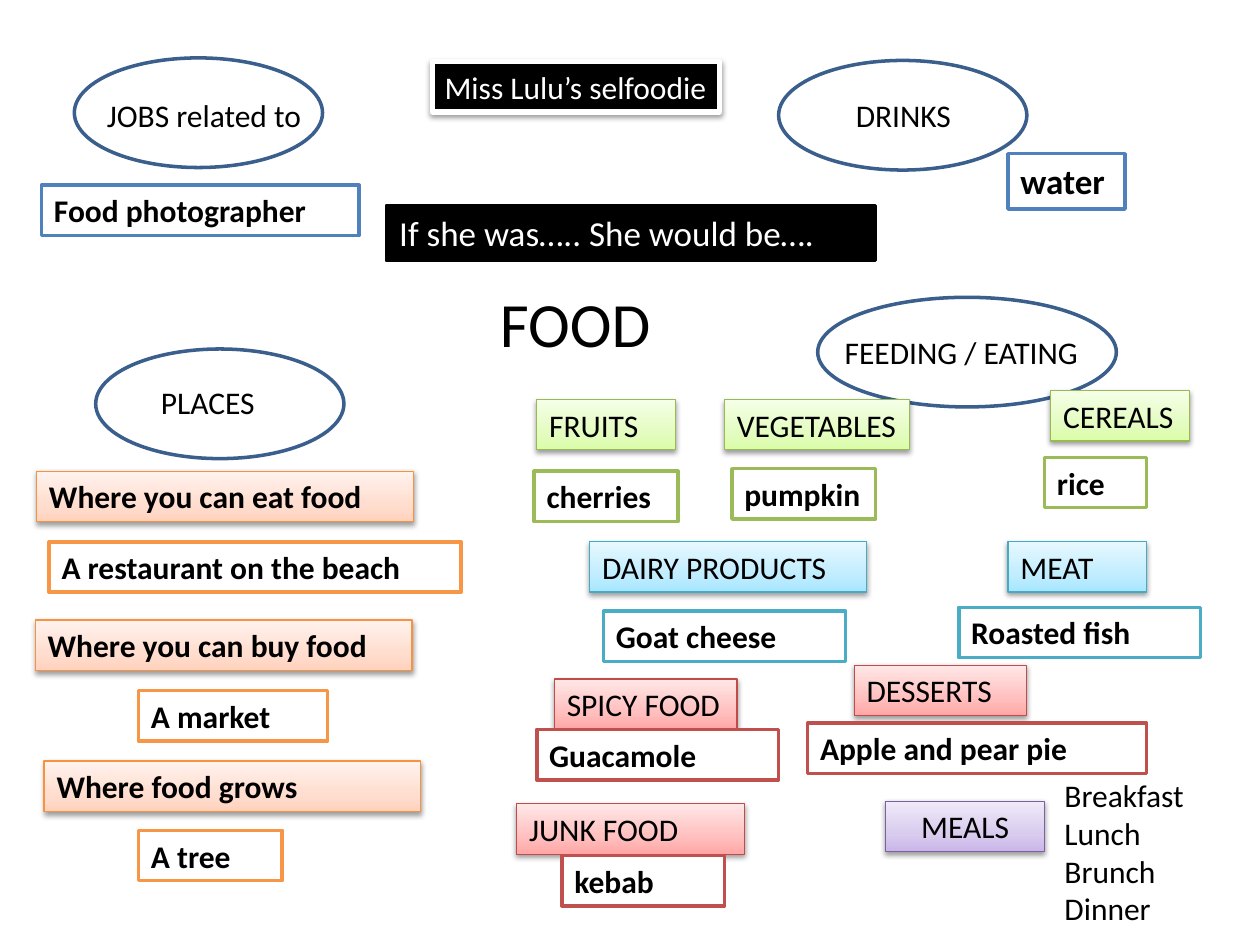
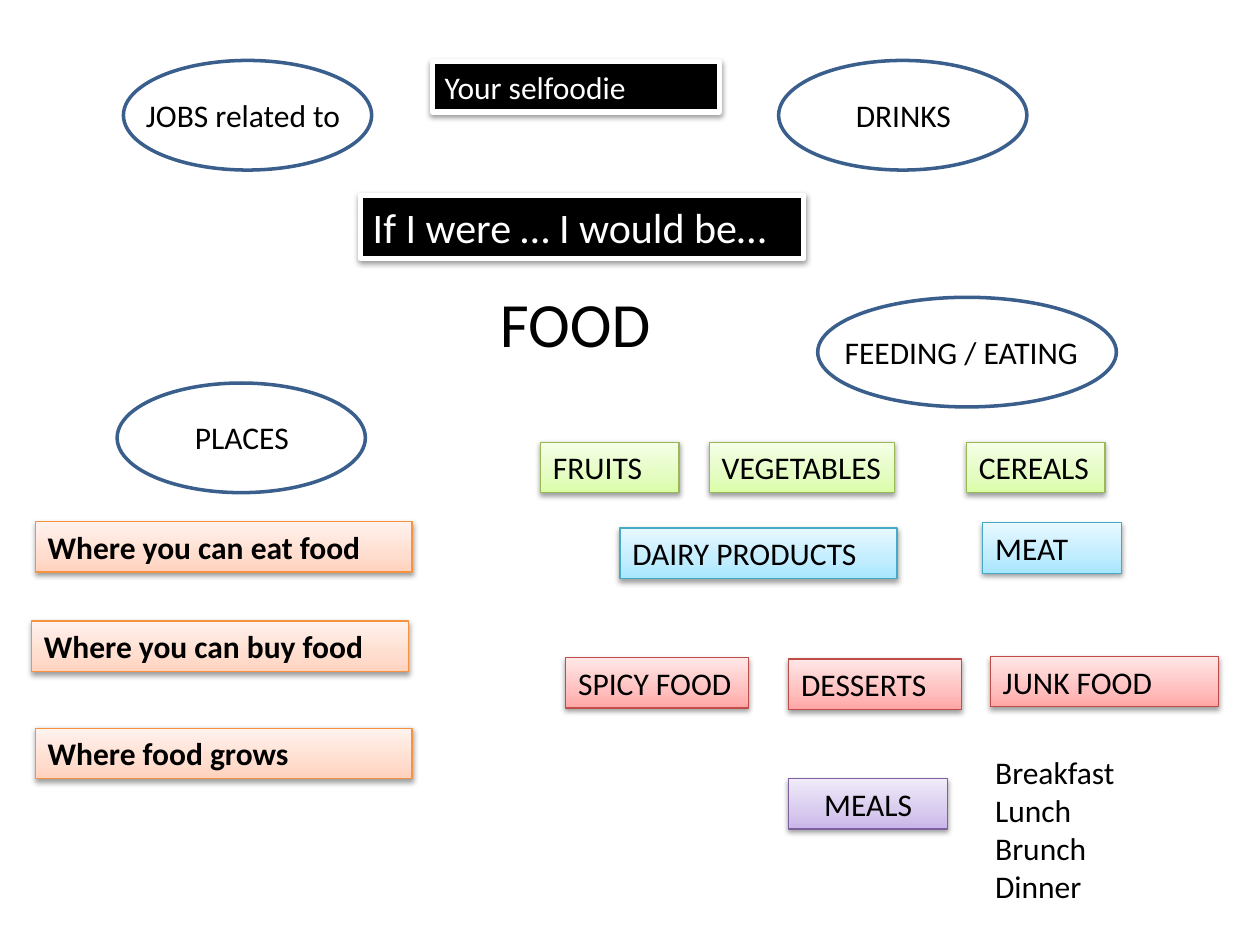
from copy import deepcopy
from dataclasses import dataclass

from lxml import etree
from pptx import Presentation
from pptx.dml.color import RGBColor
from pptx.enum.shapes import MSO_SHAPE
from pptx.enum.text import MSO_ANCHOR, MSO_AUTO_SIZE, PP_ALIGN
from pptx.oxml.ns import qn
from pptx.util import Inches, Pt

RECT, OVAL = MSO_SHAPE.RECTANGLE, MSO_SHAPE.OVAL
LEFT, CENTER = PP_ALIGN.LEFT, PP_ALIGN.CENTER
TOP = MSO_ANCHOR.TOP
GROW = MSO_AUTO_SIZE.SHAPE_TO_FIT_TEXT


@dataclass(frozen=True)
class Family:
    """Colours of one group: category outline, answer outline, gradient from bottom to top."""
    edge: str
    accent: str
    stops: tuple = ()


@dataclass(frozen=True)
class Theme:
    font: str = "Calibri"
    black: str = "000000"
    white: str = "FFFFFF"
    oval_line: str = "3A5F8C"
    body: int = 18
    large: int = 20
    banner: int = 24
    title: int = 36
    thin: float = 0.75
    medium: float = 2
    thick: float = 3
    row: float = 0.4
    oval_height: float = 0.87


THEME = Theme()
BLUE = Family("4F81BD", "4F81BD")
ORANGE = Family("F69240", "F79646", ("FFD2BD", "FFDED0", "FFF2ED"))
GREEN = Family("98B955", "9BBB59", ("DAFDA7", "E4FCC2", "F5FFE7"))
AQUA = Family("46AAC5", "4BACC6", ("A7E6FF", "C1EDFF", "E7F8FF"))
RED = Family("BF4C48", "C0504D", ("FFA6A5", "FFC0BF", "FFE7E7"))
PURPLE = Family("7D60A0", "8064A2", ("C9B5E8", "D8CBEE", "F0EAF9"))
STOP_POSITIONS = (0, 0.35, 1)

MEALS = ("Breakfast", "Lunch", "Brunch", "Dinner")

# Category name: colour family, width
CATEGORIES = {
    "Where you can eat food": (ORANGE, 2.99),
    "Where you can buy food": (ORANGE, 2.99),
    "Where food grows": (ORANGE, 2.99),
    "FRUITS": (GREEN, 1.1),
    "VEGETABLES": (GREEN, 1.47),
    "CEREALS": (GREEN, 1.1),
    "DAIRY PRODUCTS": (AQUA, 2.2),
    "MEAT": (AQUA, 1.1),
    "JUNK FOOD": (RED, 1.81),
    "SPICY FOOD": (RED, 1.45),
    "DESSERTS": (RED, 1.37),
    "MEALS": (PURPLE, 1.26),
}

# Topic name: label width, oval width, alignment
TOPICS = {
    "JOBS related to": (1.81, 1.97, LEFT),
    "PLACES": (1.34, 1.97, CENTER),
    "DRINKS": (1.34, 1.97, CENTER),
    "FEEDING / EATING": (2.24, 2.37, CENTER),
}

# Topic name: label left and top, oval left and top
FIXED_TOPICS = {
    "DRINKS": (6.5, 0.71, 6.18, 0.48),
    "FEEDING / EATING": (6.51, 2.59, 6.49, 2.36),
}
LULU_TOPICS = {
    "JOBS related to": (0.75, 0.71, 0.59, 0.46),
    "PLACES": (0.98, 2.99, 0.76, 2.77),
    **FIXED_TOPICS,
}
YOUR_TOPICS = {
    "JOBS related to": (1.06, 0.71, 0.98, 0.48),
    "PLACES": (1.25, 3.27, 0.93, 3.04),
    **FIXED_TOPICS,
}

# Category name: left, top
LULU_CATEGORIES = {
    "Where you can eat food": (0.29, 3.74),
    "Where you can buy food": (0.28, 4.92),
    "Where food grows": (0.35, 6.04),
    "FRUITS": (4.26, 3.17),
    "VEGETABLES": (5.75, 3.17),
    "DAIRY PRODUCTS": (4.68, 4.3),
    "CEREALS": (8.34, 3.1),
    "MEAT": (8, 4.3),
    "JUNK FOOD": (4.1, 6.38),
    "SPICY FOOD": (4.4, 5.39),
    "DESSERTS": (6.78, 5.28),
    "MEALS": (7.03, 6.36),
}
YOUR_CATEGORIES = {
    "Where you can eat food": (0.28, 4.14),
    "Where you can buy food": (0.25, 4.93),
    "Where food grows": (0.28, 5.78),
    "FRUITS": (4.29, 3.51),
    "VEGETABLES": (5.63, 3.51),
    "CEREALS": (7.67, 3.51),
    "DAIRY PRODUCTS": (4.92, 4.19),
    "MEAT": (7.8, 4.15),
    "JUNK FOOD": (7.86, 5.21),
    "SPICY FOOD": (4.49, 5.22),
    "DESSERTS": (6.26, 5.23),
    "MEALS": (6.26, 6.18),
}

# Text, colour family, left, top, width
LULU_ANSWERS = [
    ("Food photographer", BLUE, 0.33, 1.47, 2.52),
    ("A restaurant on the beach", ORANGE, 0.39, 4.3, 3.27),
    ("A market", ORANGE, 1.1, 5.48, 1.5),
    ("A tree", ORANGE, 1.1, 6.59, 1.14),
    ("cherries", GREEN, 4.24, 3.74, 1.14),
    ("pumpkin", GREEN, 5.81, 3.72, 1.14),
    ("rice", GREEN, 8.29, 3.63, 0.81),
    ("Goat cheese", AQUA, 4.79, 4.85, 1.92),
    ("Roasted fish", AQUA, 7.61, 4.82, 1.92),
    ("Guacamole", RED, 4.26, 5.79, 1.92),
    ("Apple and pear pie", RED, 6.41, 5.74, 2.69),
    ("kebab", RED, 4.46, 6.79, 1.29),
]


def rgb(value):
    return RGBColor.from_string(value)


class FoodMap:
    def __init__(self, prs, theme):
        self.prs, self.theme = prs, theme
        self.slide = None

    def new_slide(self):
        self.slide = self.prs.slides.add_slide(self.prs.slide_layouts[6])

    def add_text(self, sp, lines, size, color, bold=False, align=LEFT):
        tf = sp.text_frame
        tf.word_wrap = True
        tf.auto_size = GROW
        tf.vertical_anchor = TOP
        for i, line in enumerate(lines):
            p = tf.add_paragraph() if i else tf.paragraphs[0]
            p.alignment = align
            r = p.add_run()
            r.text = line
            r.font.name = self.theme.font
            r.font.size = Pt(size)
            r.font.bold = bold
            r.font.color.rgb = rgb(color)

    def label(self, lines, left, top, width, height, size, align=LEFT):
        sp = self.slide.shapes.add_textbox(*map(Inches, (left, top, width, height)))
        self.add_text(sp, lines, size, self.theme.black, align=align)

    def outline(self, preset, box, line, weight):
        sp = self.slide.shapes.add_shape(preset, *map(Inches, box))
        sp.shadow.inherit = False
        sp.fill.background()
        sp.line.color.rgb = rgb(line)
        sp.line.width = Pt(weight)
        return sp

    def panel(self, box, fill, line, weight):
        sp = self.outline(RECT, box, line, weight)
        sp.fill.solid()
        sp.fill.fore_color.rgb = rgb(fill)
        return sp

    def cast_shadow(self, sp):
        effects = sp._element.spPr.find(qn("a:effectLst"))
        shadow = etree.SubElement(effects, qn("a:outerShdw"), blurRad=str(Pt(3.1)),
                                  dist=str(Pt(1.6)), dir="5400000", rotWithShape="0")
        color = etree.SubElement(shadow, qn("a:srgbClr"), val=self.theme.black)
        etree.SubElement(color, qn("a:alpha"), val="38000")

    def shade(self, sp, colors):
        """Fill with a vertical three-stop gradient, first colour at the bottom."""
        sp.fill.gradient()
        sp.fill.gradient_angle = 90
        stops = sp._element.spPr.find(".//" + qn("a:gsLst"))
        stops.append(deepcopy(stops[-1]))
        for stop, position, color in zip(sp.fill.gradient_stops, STOP_POSITIONS, colors):
            stop.position = position
            stop.color.rgb = rgb(color)

    def topic(self, name, left, top, oval_left, oval_top):
        t = self.theme
        width, oval_width, align = TOPICS[name]
        self.label([name], left, top, width, t.row, t.body, align)
        self.outline(OVAL, (oval_left, oval_top, oval_width, t.oval_height),
                     t.oval_line, t.medium)

    def category(self, name, left, top):
        t = self.theme
        family, width = CATEGORIES[name]
        sp = self.outline(RECT, (left, top, width, t.row), family.edge, t.thin)
        self.shade(sp, family.stops)
        self.cast_shadow(sp)
        self.add_text(sp, [name], t.body, t.black, bold=family is ORANGE,
                      align=CENTER if family is PURPLE else LEFT)

    def answer(self, text, family, left, top, width, height=THEME.row, size=THEME.body):
        t = self.theme
        sp = self.panel((left, top, width, height), t.white, family.accent, t.medium)
        self.add_text(sp, [text], size, t.black, bold=True)

    def banner(self, text, box, size, framed=True):
        t = self.theme
        line, weight = (t.white, t.thick) if framed else (t.black, t.medium)
        sp = self.panel(box, t.black, line, weight)
        if framed:
            self.cast_shadow(sp)
        self.add_text(sp, [text], size, t.white)

    def base(self, name, topics, categories, meals_at):
        """Start a slide with the parts every food map has."""
        t = self.theme
        self.new_slide()
        self.label(["FOOD"], 3.66, 2.21, 1.81, 0.71, t.title, CENTER)
        for topic, place in topics.items():
            self.topic(topic, *place)
        for category, place in categories.items():
            self.category(category, *place)
        self.label(MEALS, *meals_at, 1.73, 1.31, t.body)
        self.banner(name, (3.43, 0.49, 2.28, t.row), t.body)


def main():
    prs = Presentation()
    prs.slide_width, prs.slide_height = Inches(10), Inches(7.5)
    food_map = FoodMap(prs, THEME)

    food_map.base("Miss Lulu’s selfoodie", LULU_TOPICS, LULU_CATEGORIES, (8.35, 6.11))
    food_map.banner("If she was….. She would be….", (3.07, 1.63, 3.88, 0.44),
                    THEME.large, framed=False)
    for answer in LULU_ANSWERS:
        food_map.answer(*answer)
    food_map.answer("water", BLUE, 8, 1.22, 0.93, 0.44, THEME.large)

    food_map.base("Your selfoodie", YOUR_TOPICS, YOUR_CATEGORIES, (7.8, 5.93))
    food_map.banner("If I were … I would be…", (2.86, 1.55, 3.52, 0.5), THEME.banner)

    prs.save("out.pptx")


if __name__ == "__main__":
    main()
